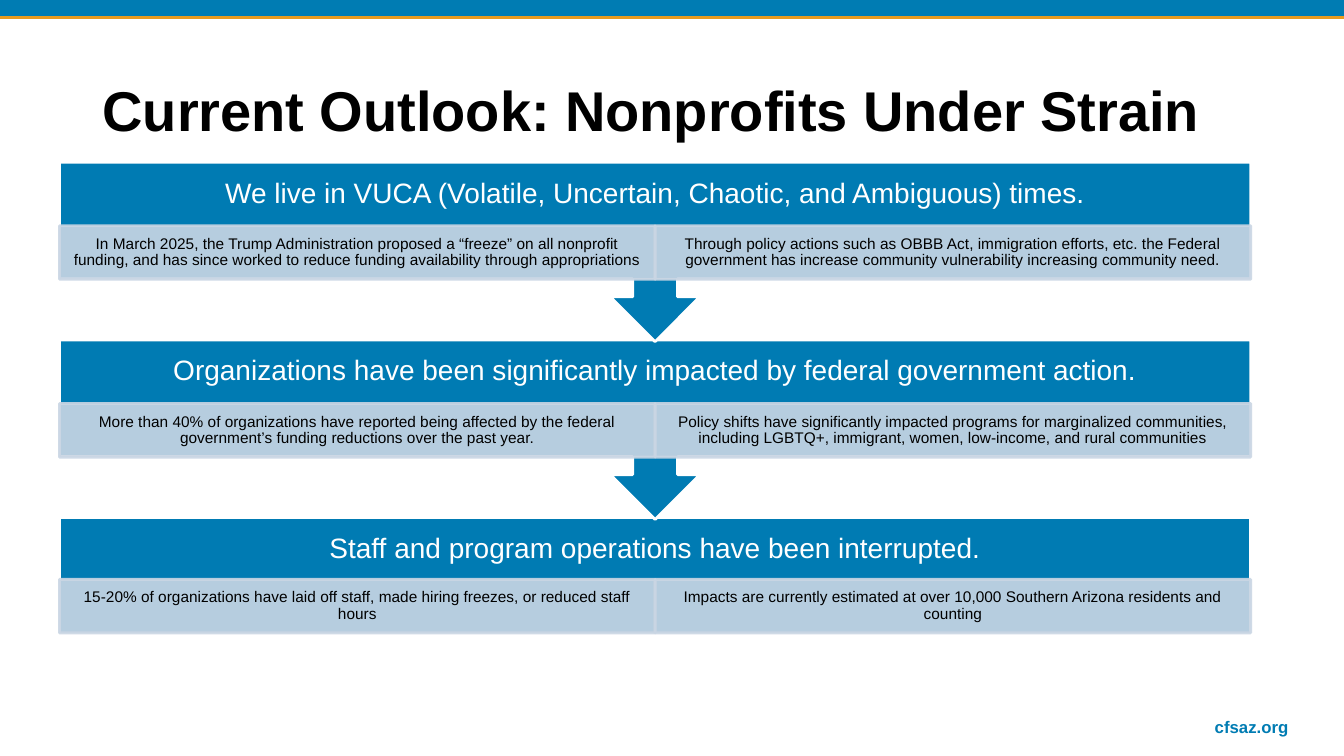
from lxml.etree import SubElement
from pptx import Presentation
from pptx.dml.color import RGBColor
from pptx.enum.shapes import MSO_CONNECTOR, MSO_SHAPE
from pptx.enum.text import MSO_ANCHOR, MSO_AUTO_SIZE, PP_ALIGN
from pptx.oxml.ns import qn
from pptx.util import Cm, Pt

BAND_BLUE = RGBColor(0x00, 0x7C, 0xB3)
STAGE_BLUE = RGBColor(0x00, 0x7B, 0xB3)
DETAIL_BLUE = RGBColor(0xCA, 0xD6, 0xE4)
ORANGE = RGBColor(0xE8, 0x9B, 0x1F)
WHITE = RGBColor(0xFF, 0xFF, 0xFF)
BLACK = RGBColor(0x00, 0x00, 0x00)

HEADING = "Current Outlook: Nonprofits Under Strain"
WEBSITE = "cfsaz.org"
STAGES = [
    ("We live in VUCA (Volatile, Uncertain, Chaotic, and Ambiguous) times.", [
        "In March 2025, the Trump Administration proposed a “freeze” on all nonprofit funding, "
        "and has since worked to reduce funding availability through appropriations",
        "Through policy actions such as OBBB Act, immigration efforts, etc. the Federal "
        "government has increase community vulnerability increasing community need.",
    ]),
    ("Organizations have been significantly impacted by federal government action.", [
        "More than 40% of organizations have reported being affected by the federal "
        "government’s funding reductions over the past year.",
        "Policy shifts have significantly impacted programs for marginalized communities, "
        "including LGBTQ+, immigrant, women, low-income, and rural communities",
    ]),
    ("Staff and program operations have been interrupted.", [
        "15-20% of organizations have laid off staff, made hiring freezes, or reduced staff hours",
        "Impacts are currently estimated at over 10,000 Southern Arizona residents and counting",
    ]),
]

SLIDE_WIDTH, SLIDE_HEIGHT = 33.87, 19.05
STAGE_LEFT, STAGE_TOP, STAGE_WIDTH, STAGE_PITCH = 1.5, 4.09, 30.02, 4.48
CALLOUT_HEIGHT, LAST_HEIGHT = 4.52, 2.95
HEADER_HEIGHT, LAST_HEADER_HEIGHT, DETAIL_HEIGHT = 1.6, 1.55, 1.35
CALLOUT_ADJUSTMENTS = (0.25, 0.25, 0.25, 0.65)

TITLE_FONT = {"name": "Arial", "size": Pt(40), "bold": True}
WEBSITE_FONT = {"name": "Arial", "size": Pt(12), "bold": True}
STAGE_FONT = {"name": "Arial", "size": Pt(20), "bold": False}
DETAIL_FONT = {"name": "Arial", "size": Pt(11), "bold": False}
TITLE_FRAME = {"word_wrap": True, "auto_size": MSO_AUTO_SIZE.NONE,
               "vertical_anchor": MSO_ANCHOR.MIDDLE}
WEBSITE_FRAME = {"word_wrap": True, "vertical_anchor": MSO_ANCHOR.BOTTOM}
STAGE_FRAME = {"word_wrap": True, "vertical_anchor": MSO_ANCHOR.MIDDLE,
               "margin_left": Cm(0.41), "margin_right": Cm(0.41), "margin_top": Cm(0)}
DETAIL_FRAME = {"word_wrap": True, "vertical_anchor": MSO_ANCHOR.MIDDLE,
                "margin_left": Cm(0.23), "margin_right": Cm(0.23),
                "margin_top": Cm(0.05), "margin_bottom": Cm(0.05)}


def apply_format(target, values):
    for attribute, value in values.items():
        setattr(target, attribute, value)


def write(holder, wording, frame, font, color, alignment, line_spacing=0.9):
    apply_format(holder.text_frame, frame)
    holder.text_frame.text = wording
    paragraph = holder.text_frame.paragraphs[0]
    apply_format(paragraph, {"alignment": alignment, "line_spacing": line_spacing})
    apply_format(paragraph.font, font)
    paragraph.font.color.rgb = color


def add_block(slide, kind, box, fill, outline=None):
    block = slide.shapes.add_shape(kind, *map(Cm, box))
    block.shadow.inherit = False
    block.fill.solid()
    block.fill.fore_color.rgb = fill
    if outline is None:
        block.line.fill.background()
    else:
        block.line.color.rgb = outline
        block.line.width = Pt(2)
    return block


def add_detail(slide, wording, box):
    detail = add_block(slide, MSO_SHAPE.RECTANGLE, box, DETAIL_BLUE, DETAIL_BLUE)
    for color in detail.element.spPr.iter(qn("a:srgbClr")):
        SubElement(color, qn("a:alpha"), val="90000")
    write(detail, wording, DETAIL_FRAME, DETAIL_FONT, BLACK, PP_ALIGN.CENTER)


def add_stage(slide, index, statement, details):
    last = index == len(STAGES) - 1
    top = STAGE_TOP + index * STAGE_PITCH
    height = LAST_HEIGHT if last else CALLOUT_HEIGHT
    body_height = LAST_HEIGHT if last else CALLOUT_HEIGHT * CALLOUT_ADJUSTMENTS[3]
    header_height = LAST_HEADER_HEIGHT if last else HEADER_HEIGHT
    kind = MSO_SHAPE.RECTANGLE if last else MSO_SHAPE.DOWN_ARROW_CALLOUT
    stage = add_block(slide, kind, (STAGE_LEFT, top, STAGE_WIDTH, height), STAGE_BLUE, WHITE)
    if not last:
        for position, value in enumerate(CALLOUT_ADJUSTMENTS):
            stage.adjustments[position] = value
    frame = STAGE_FRAME | {"margin_bottom": Cm(body_height - HEADER_HEIGHT)}
    write(stage, statement, frame, STAGE_FONT, WHITE, PP_ALIGN.CENTER)
    detail_width = STAGE_WIDTH / len(details)
    for column, wording in enumerate(details):
        add_detail(slide, wording, (STAGE_LEFT + column * detail_width, top + header_height,
                                    detail_width, DETAIL_HEIGHT))


def main():
    deck = Presentation()
    apply_format(deck, {"slide_width": Cm(SLIDE_WIDTH), "slide_height": Cm(SLIDE_HEIGHT)})
    slide = deck.slides.add_slide(deck.slide_layouts[5])

    add_block(slide, MSO_SHAPE.RECTANGLE, (0, -0.05, SLIDE_WIDTH, 0.5), BAND_BLUE)
    stripe = slide.shapes.add_connector(MSO_CONNECTOR.STRAIGHT, Cm(0), Cm(0.44),
                                        Cm(SLIDE_WIDTH), Cm(0.44))
    stripe.line.color.rgb = ORANGE
    stripe.line.width = Pt(2.5)
    SubElement(stripe.element.spPr, qn("a:effectLst"))

    title = slide.shapes.title
    apply_format(title, {"left": Cm(2.33), "top": Cm(1.01),
                         "width": Cm(29.21), "height": Cm(3.68)})
    write(title, HEADING, TITLE_FRAME, TITLE_FONT, BLACK, PP_ALIGN.LEFT)

    website = slide.shapes.add_textbox(Cm(25.1), Cm(17.68), Cm(7.62), Cm(1.02))
    write(website, WEBSITE, WEBSITE_FRAME, WEBSITE_FONT, BAND_BLUE, PP_ALIGN.RIGHT, 1.0)

    for index, (statement, details) in reversed(list(enumerate(STAGES))):
        add_stage(slide, index, statement, details)

    deck.save("out.pptx")


if __name__ == "__main__":
    main()
